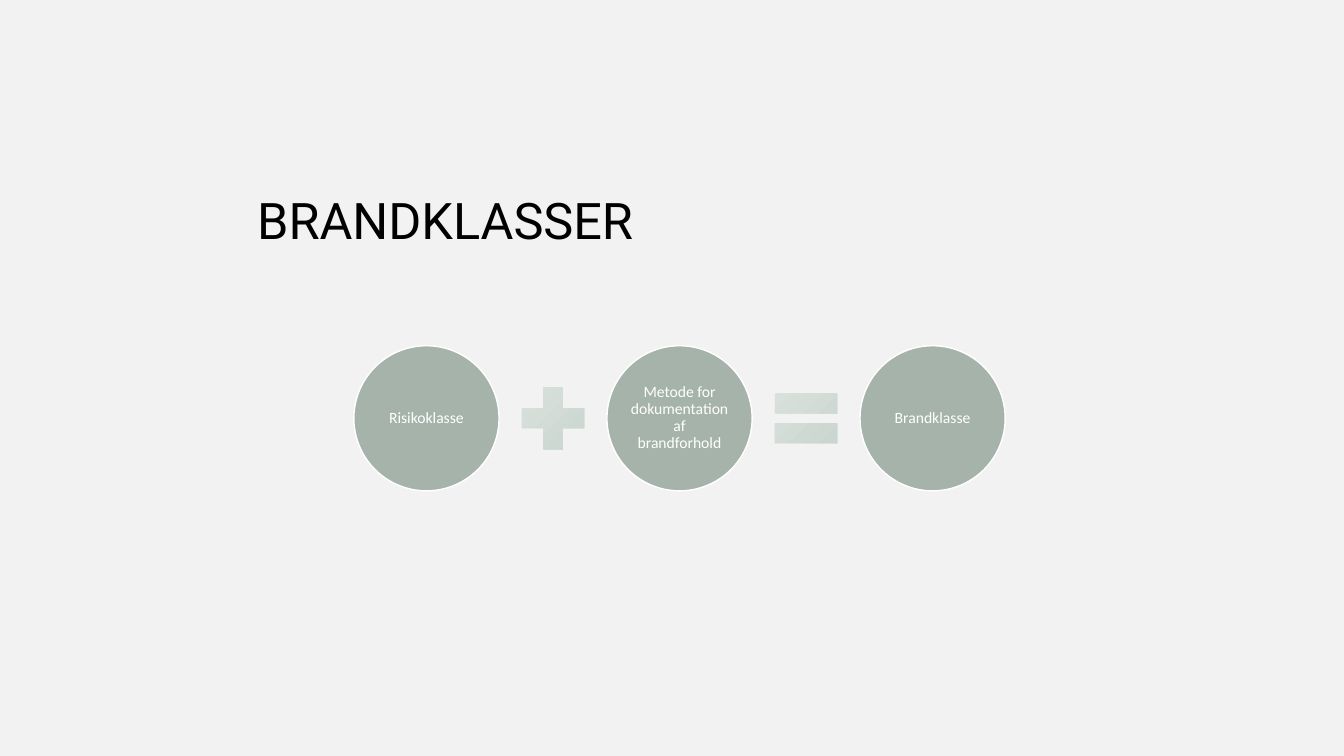
from lxml import etree
from pptx import Presentation
from pptx.dml.color import RGBColor
from pptx.enum.shapes import MSO_SHAPE
from pptx.enum.text import MSO_ANCHOR, MSO_AUTO_SIZE, PP_ALIGN
from pptx.oxml.ns import qn
from pptx.util import Inches, Pt

OVAL, PLUS, EQUAL = MSO_SHAPE.OVAL, MSO_SHAPE.MATH_PLUS, MSO_SHAPE.MATH_EQUAL
MIDDLE, BOTTOM = MSO_ANCHOR.MIDDLE, MSO_ANCHOR.BOTTOM
LEFT, CENTER = PP_ALIGN.LEFT, PP_ALIGN.CENTER
NO_AUTOFIT = MSO_AUTO_SIZE.NONE

BACKGROUND = RGBColor(0xF2, 0xF2, 0xF2)
BLACK = RGBColor(0x00, 0x00, 0x00)
WHITE = RGBColor(0xFF, 0xFF, 0xFF)
SAGE = RGBColor(0xA5, 0xB3, 0xAB)
OPERATOR_DARK = RGBColor(0xC7, 0xD3, 0xCC)
OPERATOR_LIGHT = RGBColor(0xDC, 0xE3, 0xDF)

TERMS = ["Risikoklasse", "Metode for dokumentation af brandforhold", "Brandklasse"]
OPERATORS = [PLUS, EQUAL]
CENTER_Y = 4.15
FIRST_CENTER_X = 4.23
TERM_STEP = 2.51
TERM_SIZE = 1.44
OPERATOR_SIZE = 0.84


class EquationSlide:
    """Holds the style and the slide on which the equation is built."""

    title_font = "Roboto"
    term_font = "Calibri"

    def __init__(self, presentation):
        """Add a title-only slide with the plain background."""
        self.slide = presentation.slides.add_slide(presentation.slide_layouts[5])
        background = self.slide.background.fill
        background.solid()
        background.fore_color.rgb = BACKGROUND

    def set_text(self, frame, words, font_name, size, color, align, anchor, inset):
        """Fill a text frame with one formatted run."""
        frame.word_wrap = True
        frame.auto_size = NO_AUTOFIT
        frame.vertical_anchor = anchor
        frame.margin_left = frame.margin_right = Inches(inset)
        frame.margin_top = frame.margin_bottom = Inches(inset)
        paragraph = frame.paragraphs[0]
        paragraph.alignment = align
        paragraph.line_spacing = 0.9
        run = paragraph.add_run()
        run.text = words
        run.font.name = font_name
        run.font.size = Pt(size)
        run.font.color.rgb = color

    def title(self, words):
        """Place and fill the slide title."""
        heading = self.slide.shapes.title
        heading.left, heading.top = Inches(2.55), Inches(1.97)
        heading.width, heading.height = Inches(8.24), Inches(0.51)
        self.set_text(heading.text_frame, words, self.title_font, 36, BLACK, LEFT, BOTTOM, 0)

    def centered_shape(self, preset, center_x, size):
        """Add a square preset shape centred on the equation's axis."""
        shape = self.slide.shapes.add_shape(
            preset, Inches(center_x - size / 2), Inches(CENTER_Y - size / 2),
            Inches(size), Inches(size))
        shape.shadow.inherit = False
        return shape

    def term(self, words, center_x):
        """Add a labelled circle."""
        circle = self.centered_shape(OVAL, center_x, TERM_SIZE)
        circle.fill.solid()
        circle.fill.fore_color.rgb = SAGE
        circle.line.color.rgb = WHITE
        circle.line.width = Pt(1)
        self.set_text(circle.text_frame, words, self.term_font, 11.2, WHITE, CENTER, MIDDLE, 0.02)

    def operator(self, preset, center_x):
        """Add a math sign shaded outward from its lower right corner."""
        sign = self.centered_shape(preset, center_x, OPERATOR_SIZE)
        sign.line.fill.background()
        sign.fill.gradient()
        for stop, color in zip(sign.fill.gradient_stops, (OPERATOR_DARK, OPERATOR_LIGHT)):
            stop.color.rgb = color
        gradient = sign.element.spPr.find(qn("a:gradFill"))
        gradient.remove(gradient.find(qn("a:lin")))
        shading = etree.SubElement(gradient, qn("a:path"), {"path": "circle"})
        etree.SubElement(shading, qn("a:fillToRect"), {"l": "100000", "t": "100000"})


def main():
    """Build the slide and save it."""
    presentation = Presentation()
    presentation.slide_width = Inches(13.33)
    presentation.slide_height = Inches(7.5)
    equation = EquationSlide(presentation)
    equation.title("BRANDKLASSER")
    for position, words in enumerate(TERMS):
        center_x = FIRST_CENTER_X + position * TERM_STEP
        equation.term(words, center_x)
        if position < len(OPERATORS):
            equation.operator(OPERATORS[position], center_x + TERM_STEP / 2)
    presentation.save("out.pptx")


if __name__ == "__main__":
    main()
